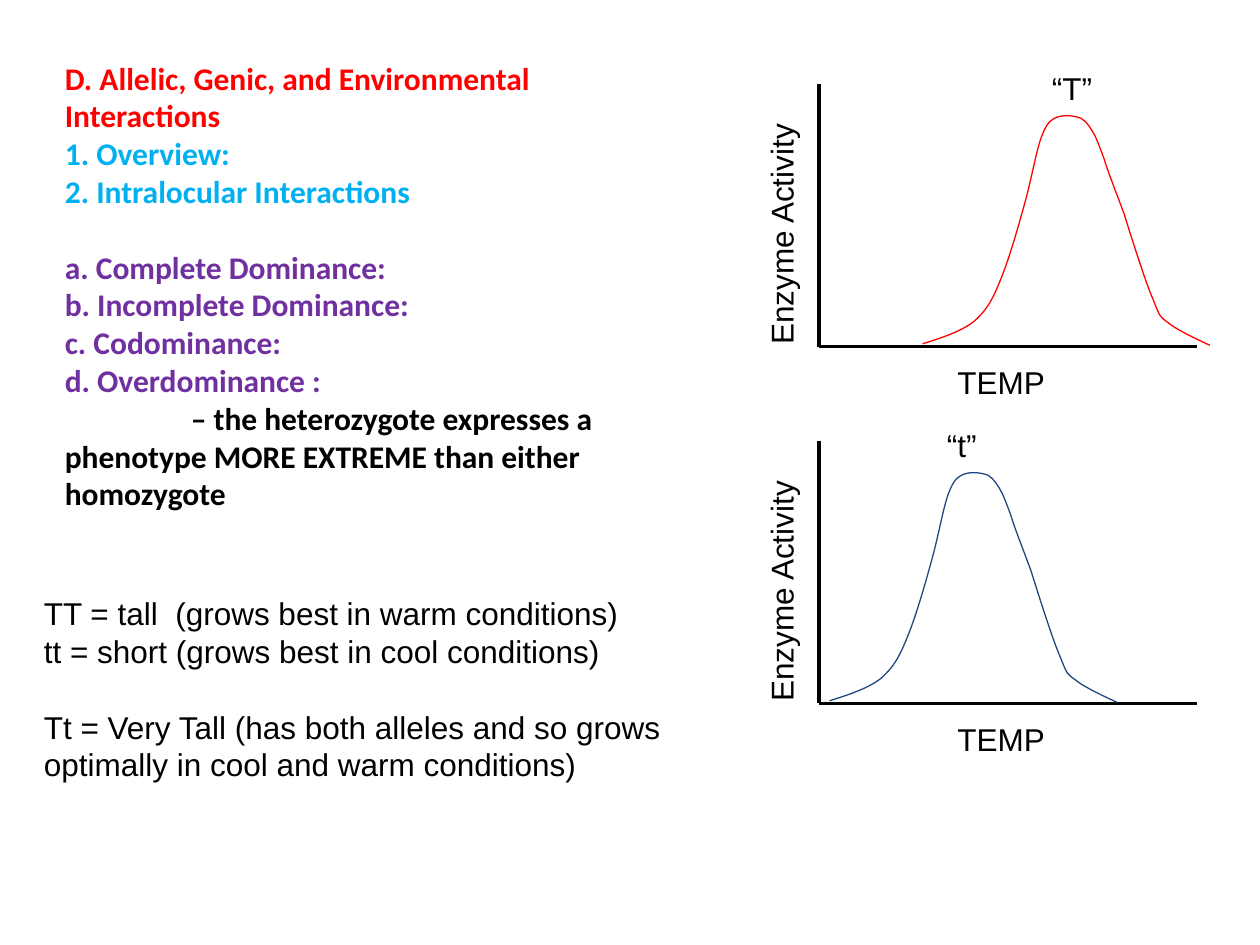
from pptx import Presentation
from pptx.dml.color import RGBColor as RGB
from pptx.enum.shapes import MSO_CONNECTOR as Conn
from pptx.oxml.ns import qn
from pptx.util import Pt
from lxml.etree import SubElement as Sub

RED = RGB(0xFF, 0, 0)
CYAN = RGB(0, 0xB0, 0xF0)
PURPLE = RGB(0x70, 0x30, 0xA0)
NAVY = RGB(0x1F, 0x49, 0x7D)
BLACK = RGB(0, 0, 0)
GAP = 21.6

# Rows of text: words, colour, space before, first-line indent
OUTLINE = [
    ("D. Allelic, Genic, and Environmental Interactions", RED, 0, 0),
    ("1. Overview:", CYAN, 0, 0),
    ("2. Intralocular Interactions", CYAN, 0, 0),
    ("a. Complete Dominance:", PURPLE, GAP, 0),
    ("b. Incomplete Dominance:", PURPLE, 0, 0),
    ("c. Codominance:", PURPLE, 0, 0),
    ("d. Overdominance :", PURPLE, 0, 0),
    ("– the heterozygote expresses a phenotype MORE EXTREME than either "
     "homozygote", BLACK, 0, 72),
]
NOTES = [
    ("TT = tall  (grows best in warm conditions)", BLACK, 0, 0),
    ("tt = short (grows best in cool conditions)", BLACK, 0, 0),
    ("Tt = Very Tall (has both alleles and so grows optimally in cool and "
     "warm conditions)", BLACK, GAP, 0),
]

# Bell curve: size, start, then two controls and an end for each Bezier piece
BELL_W, BELL_H = 164.2, 131.8
START = (0, 131)
BELL = [
    ((11.5, 127.4), (22.3, 123.8), (29.5, 118.1)),
    ((36.7, 111.6), (39.6, 106.6), (44.6, 94.3)),
    ((49.7, 82.1), (56.2, 59), (59.8, 45.4)),
    ((63.4, 31), (65.5, 18.7), (68.4, 11.5)),
    ((71.3, 4.3), (73.4, 2.9), (77, 1.4)),
    ((81.4, 0), (87.1, 0.7), (90.7, 2.2)),
    ((94.3, 4.3), (96.5, 8.6), (98.6, 12.2)),
    ((100.1, 15.8), (100.8, 17.3), (103.7, 25.2)),
    ((105.8, 32.4), (110.2, 43.2), (115.2, 56.9)),
    ((119.5, 70.6), (127.4, 95.8), (131.8, 105.8)),
    ((136.1, 116.6), (135.4, 115.2), (141.1, 119.5)),
    ((146.2, 123.8), (BELL_W, BELL_H), (BELL_W, BELL_H)),
]


def add_text(shapes, box, rows, font="Arial", bold=False):
    item = shapes.add_textbox(*map(Pt, box))
    frame = item.text_frame
    frame.word_wrap = True
    frame.text = "\n".join(row[0] for row in rows)
    for para, (_, color, gap, indent) in zip(frame.paragraphs, rows):
        if gap:
            para.space_before = Pt(gap)
        if indent:
            para._p.get_or_add_pPr().set("indent", str(Pt(indent)))
        for run in para.runs:
            run.font.name = font
            run.font.size = Pt(18)
            run.font.bold = bold
            run.font.color.rgb = color
    return item


def add_label(shapes, text, box):
    return add_text(shapes, box, [(text, BLACK, 0, 0)])


def add_axis(shapes, x1, y1, x2, y2):
    line = shapes.add_connector(Conn.STRAIGHT, *map(Pt, (x1, y1, x2, y2)))
    line.line.color.rgb = BLACK
    line.line.width = Pt(2.25)
    Sub(line._element.spPr, qn("a:effectLst"))


def add_curve(shapes, x, y, color):
    # The frame is set by its corners, then the Bezier pieces fill it
    pen = shapes.build_freeform(0, 0, scale=1.0)
    pen.add_line_segments([(Pt(BELL_W), Pt(BELL_H))], close=False)
    curve = pen.convert_to_shape(Pt(x), Pt(y))
    track = curve._element.spPr.find(".//" + qn("a:path"))
    for node in list(track):
        track.remove(node)
    pieces = [("a:moveTo", [START])] + [("a:cubicBezTo", b) for b in BELL]
    for tag, points in pieces:
        node = Sub(track, qn(tag))
        for px, py in points:
            Sub(node, qn("a:pt"), x=str(Pt(px)), y=str(Pt(py)))
    curve.fill.background()
    curve.line.color.rgb = color
    curve.line.width = Pt(0.75)
    curve.shadow.inherit = False


def add_graph(slide, box, name, name_x, curve_x, color):
    x, y, w, h = box
    shapes = slide.shapes.add_group_shape().shapes
    # Axes and curve
    add_axis(shapes, x, y, x, y + h)
    add_axis(shapes, x, y + h, x + w, y + h)
    add_curve(shapes, x + curve_x, y + 17.5, color)
    # Labels
    add_label(shapes, "TEMP", (x + 72, y + h + 6, 132, 29))
    side = add_label(shapes, "Enzyme Activity", (x - 105.5, y + 57.5, 168, 29))
    side.rotation = 270
    add_label(shapes, name, (x + name_x, y - 12, 54, 30))


def main():
    deck = Presentation()
    deck.slide_width, deck.slide_height = Pt(720), Pt(540)
    slide = deck.slides.add_slide(deck.slide_layouts[6])
    # Outline
    add_text(slide.shapes, (30, 30, 360, 291), OUTLINE, "Calibri", True)
    # One graph for each allele
    add_graph(slide, (468, 48, 216, 150), "“T”", 126, 59.2, RED)
    add_graph(slide, (468, 252, 216, 150), "“t”", 66, 6, NAVY)
    # Notes
    add_text(slide.shapes, (18, 336, 402, 117), NOTES)
    deck.save("out.pptx")


if __name__ == "__main__":
    main()
